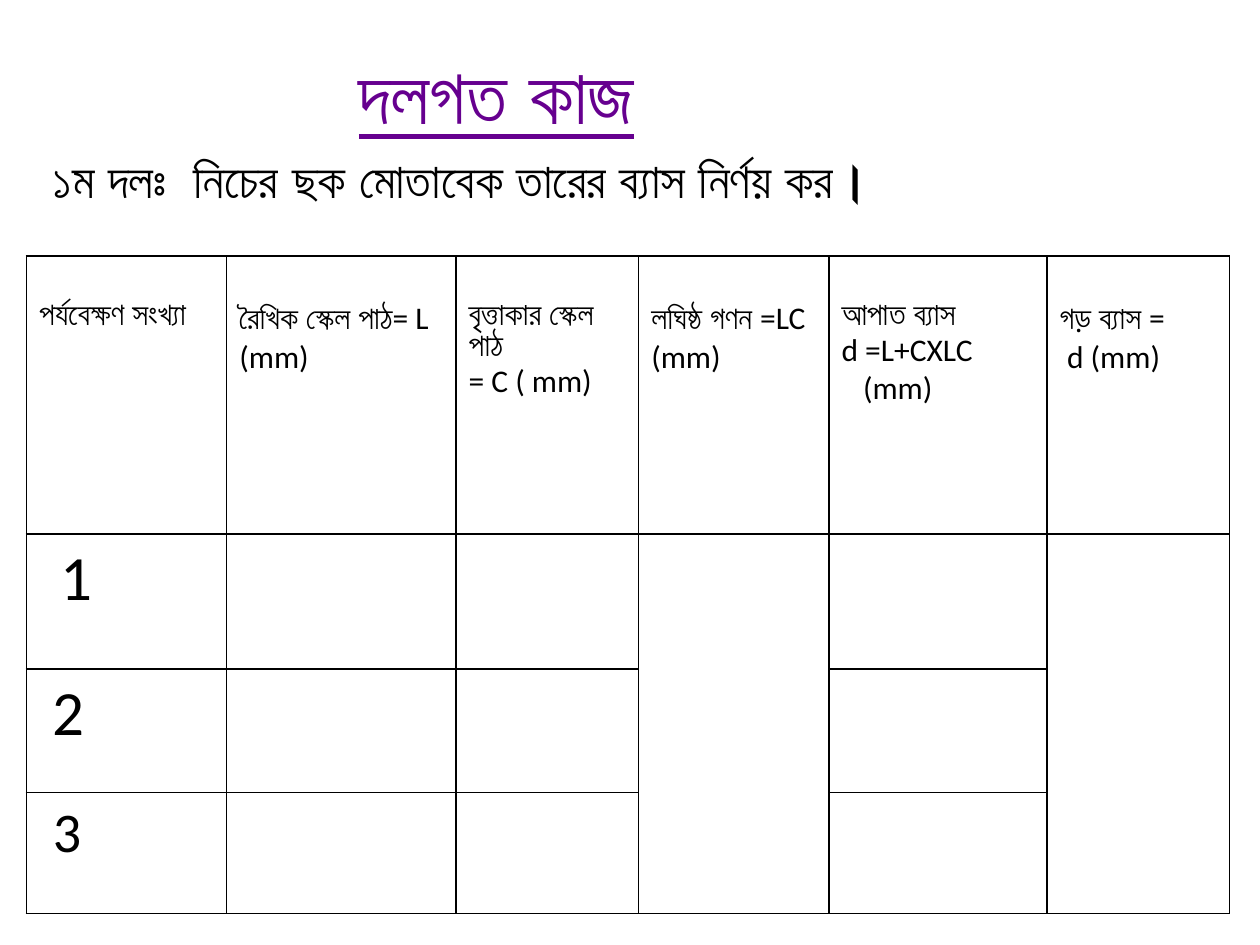
from lxml.etree import SubElement
from pptx import Presentation
from pptx.dml.color import RGBColor
from pptx.oxml.ns import qn
from pptx.util import Inches, Pt

FONT = "Calibri"
BLACK = "000000"
PURPLE = "66008F"

COLUMN_WIDTHS = [1.59, 1.82, 1.45, 1.51, 1.73, 1.45]
ROW_HEIGHTS = [2.21, 1.07, 0.98, 0.96]
MERGED_COLUMNS = [3, 5]

# Each header is a list of (text, indent in inches)
HEADERS = [
    [("পর্যবেক্ষণ সংখ্যা", 0)],
    [("রৈখিক স্কেল পাঠ= L (mm)", 0)],
    [("বৃত্তাকার স্কেল পাঠ", 0), ("= C ( mm)", 0)],
    [("লঘিষ্ঠ গণন =LC (mm)", 0)],
    [("আপাত ব্যাস", 0), ("d =L+CXLC", 0), ("(mm)", 0.17)],
    [("গড় ব্যাস =", 0), ("d (mm)", 0.06)],
]
# Observation number, text size, indent in inches
OBSERVATIONS = [("1", 36, 0.17), ("2", 36, 0.11), ("3", 32, 0.11)]


def color(value):
    return RGBColor.from_string(value)


def write(paragraph, text, size=18, fill=BLACK, bold=False, underline=False, indent=0):
    """Add one formatted run to a paragraph."""
    run = paragraph.add_run()
    run.text = text
    run.font.name = FONT
    run.font.size = Pt(size)
    run.font.bold = bold
    run.font.underline = underline
    run.font.color.rgb = color(fill)
    if indent:
        paragraph._p.get_or_add_pPr().set("marL", str(Inches(indent)))


def add_text(slide, box, text, **text_format):
    shape = slide.shapes.add_textbox(*[Inches(value) for value in box])
    shape.text_frame.word_wrap = True
    write(shape.text_frame.paragraphs[0], text, **text_format)


def style_cell(cell):
    """Give a cell black borders and no fill."""
    properties = cell._tc.get_or_add_tcPr()
    for side in ("a:lnL", "a:lnR", "a:lnT", "a:lnB"):
        line = SubElement(properties, qn(side), w=str(Pt(1)))
        solid = SubElement(line, qn("a:solidFill"))
        SubElement(solid, qn("a:srgbClr"), val=BLACK)
    cell.fill.background()


def add_heading(slide, left, top):
    add_text(slide, (left + 2.75, top, 3.5, 0.84), "দলগত কাজ",
             size=44, fill=PURPLE, bold=True, underline=True)
    add_text(slide, (left, top + 0.81, 9.83, 0.57),
             "১ম দলঃ  নিচের ছক মোতাবেক তারের ব্যাস নির্ণয় কর।",
             size=28, bold=True, indent=0.32)


def add_observation_table(slide, left, top):
    frame = slide.shapes.add_table(
        len(ROW_HEIGHTS), len(COLUMN_WIDTHS), Inches(left), Inches(top),
        Inches(sum(COLUMN_WIDTHS)), Inches(sum(ROW_HEIGHTS)))
    table = frame.table
    table.first_row = table.horz_banding = False
    for column, width in zip(table.columns, COLUMN_WIDTHS):
        column.width = Inches(width)
    for row, height in zip(table.rows, ROW_HEIGHTS):
        row.height = Inches(height)
    for cell in table.iter_cells():
        style_cell(cell)

    # Header row, starting one line below the top edge
    for index, lines in enumerate(HEADERS):
        cell = table.cell(0, index)
        cell.margin_top = Inches(0.35)
        for number, (text, indent) in enumerate(lines):
            frame_text = cell.text_frame
            paragraph = frame_text.add_paragraph() if number else frame_text.paragraphs[0]
            write(paragraph, text, indent=indent)

    # Observation numbers
    for row, (text, size, indent) in enumerate(OBSERVATIONS, start=1):
        write(table.cell(row, 0).text_frame.paragraphs[0], text, size=size, indent=indent)

    # Columns with one shared value
    for index in MERGED_COLUMNS:
        table.cell(1, index).merge(table.cell(len(OBSERVATIONS), index))


def main():
    presentation = Presentation()
    presentation.slide_width = Inches(10)
    presentation.slide_height = Inches(7.5)
    slide = presentation.slides.add_slide(presentation.slide_layouts[6])
    add_heading(slide, 0, 0.33)
    add_observation_table(slide, 0.21, 2.03)
    presentation.save("out.pptx")


if __name__ == "__main__":
    main()
